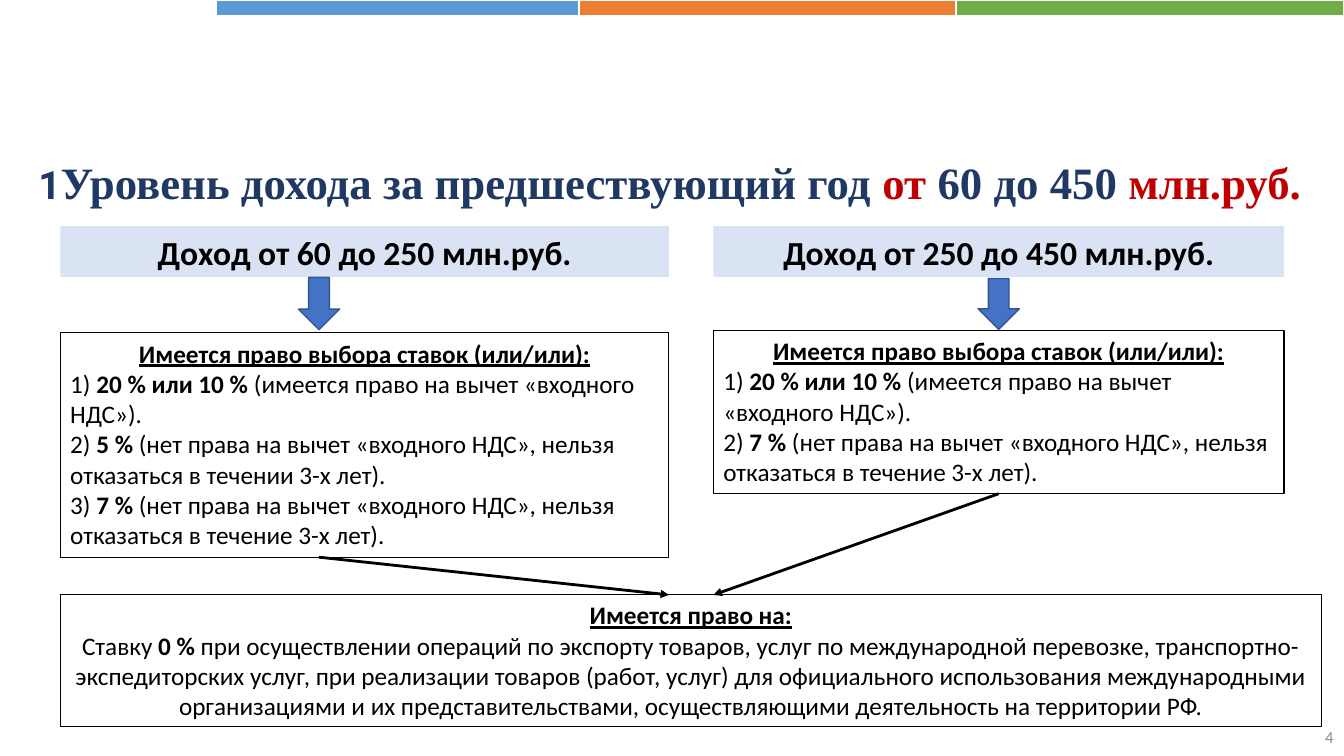
import pptx
import pptx.util
import pptx.dml.color
from lxml import etree
from pptx.enum.shapes import MSO_CONNECTOR, MSO_SHAPE
from pptx.enum.text import MSO_ANCHOR, PP_ALIGN
from pptx.oxml.ns import qn
from pptx.util import Cm

NAVY, RED, BLACK = "203864", "C00000", "000000"


def rgb(hex_code):
    return pptx.dml.color.RGBColor.from_string(hex_code)


class RatesSlide:
    body_font = "Calibri"

    def __init__(self, deck):
        self.slide = deck.slides.add_slide(deck.slide_layouts[5])
        self.shapes = self.slide.shapes

    def style(self, font, size, color, bold=None):
        font.name = self.body_font
        font.size = pptx.util.Pt(size)
        font.color.rgb = rgb(color)
        font.bold = bold

    def title(self, area, parts):
        """Fill the title from (text, font, size, colour) parts."""
        title = self.shapes.title
        title.left, title.top, title.width, title.height = map(Cm, area)
        title.text_frame.vertical_anchor = MSO_ANCHOR.TOP
        title.text_frame.word_wrap = True
        paragraph = title.text_frame.paragraphs[0]
        paragraph.alignment = PP_ALIGN.LEFT
        paragraph.line_spacing = 1.0
        paragraph.font.bold = True
        for text, font_name, size, color in parts:
            run = paragraph.add_run()
            run.text = text
            run.font.name = font_name
            run.font.size = pptx.util.Pt(size)
            run.font.color.rgb = rgb(color)

    def shape(self, kind, area, fill=None, line=None, line_width=1):
        shape = self.shapes.add_shape(kind, *map(Cm, area))
        shape.shadow.inherit = False
        if fill:
            shape.fill.solid()
            shape.fill.fore_color.rgb = rgb(fill)
        else:
            shape.fill.background()
        if line:
            shape.line.color.rgb = rgb(line)
            shape.line.width = pptx.util.Pt(line_width)
        else:
            shape.line.fill.background()
        return shape

    def income_band(self, area, text):
        band = self.shape(MSO_SHAPE.RECTANGLE, area, "DAE3F3")
        paragraph = band.text_frame.paragraphs[0]
        paragraph.text = text
        paragraph.alignment = PP_ALIGN.CENTER
        self.style(paragraph.font, 24, BLACK, True)

    def rules_box(self, area, heading, rules, alignment=PP_ALIGN.LEFT):
        """Draw a framed box; each rule is (lead, bold rate, explanation)."""
        box = self.shape(MSO_SHAPE.RECTANGLE, area, line=BLACK, line_width=0.75)
        frame = box.text_frame
        frame.vertical_anchor = MSO_ANCHOR.TOP
        top = frame.paragraphs[0]
        top.text = heading
        top.alignment = PP_ALIGN.CENTER
        self.style(top.font, 18, BLACK, True)
        top.font.underline = True
        for rule in rules:
            paragraph = frame.add_paragraph()
            paragraph.alignment = alignment
            self.style(paragraph.font, 18, BLACK)
            for text, bold in zip(rule, (False, True, False)):
                run = paragraph.add_run()
                run.text = text
                run.font.bold = bold
        return box

    def arrow(self, start, end, source=None):
        arrow = self.shapes.add_connector(MSO_CONNECTOR.STRAIGHT, *map(Cm, start + end))
        if source is not None:
            arrow.begin_connect(source, 2)
        arrow.line.color.rgb = rgb(BLACK)
        arrow.line.width = pptx.util.Pt(2)
        etree.SubElement(arrow.line._get_or_add_ln(), qn("a:tailEnd"), type="triangle")
        etree.SubElement(arrow._element.spPr, qn("a:effectLst"))

    def page_number(self, area, number):
        box = self.shapes.add_textbox(*map(Cm, area))
        box.text_frame.word_wrap = True
        box.text_frame.vertical_anchor = MSO_ANCHOR.MIDDLE
        paragraph = box.text_frame.paragraphs[0]
        paragraph.text = number
        paragraph.alignment = PP_ALIGN.RIGHT
        self.style(paragraph.font, 12, "8C8C8C")


def main():
    deck = pptx.Presentation()
    deck.slide_width, deck.slide_height = Cm(33.87), Cm(19.05)
    page = RatesSlide(deck)

    for left, width, color in ((5.46, 9.12, "5B9BD5"), (14.6, 9.5, "ED7D31"),
                               (24.09, 9.78, "70AD47")):
        page.shape(MSO_SHAPE.RECTANGLE, (left, 0, width, 0.4), color, "FFFFFF")

    serif = "Times New Roman"
    page.title((0.71, 3.78, 32.8, 1.62), (
        ("1", "Roboto", 28, NAVY),
        ("Уровень дохода за предшествующий год", serif, 32, NAVY),
        (" от ", serif, 32, RED),
        ("60 до 450 ", serif, 32, NAVY),
        ("млн.руб.", serif, 32, RED),
    ))
    page.page_number((26.24, 18.06, 7.62, 1.02), "4")

    left_x, left_width = 1.52, 15.34
    right_x, right_width = 17.98, 14.38
    left_axis, right_axis = 8.04, right_x + right_width / 2
    summary_top = 14.99
    page.income_band((left_x, 5.7, left_width, 1.28), "Доход от 60 до 250 млн.руб.")
    page.income_band((right_x, 5.7, right_width, 1.28), "Доход от 250 до 450 млн.руб.")
    for axis, top, height in ((left_axis, 6.99, 1.32), (right_axis, 7.02, 1.28)):
        page.shape(MSO_SHAPE.DOWN_ARROW, (axis - 0.52, top, 1.04, height),
                   "4472C4", "325491")

    choice = "Имеется право выбора ставок (или/или):"
    deduction = "(имеется право на вычет «входного НДС»)."
    no_deduction = "(нет права на вычет «входного НДС», нельзя отказаться в {} 3-х лет)."
    page.rules_box((left_x, 8.39, left_width, 5.65), choice, (
        ("1) ", "20 % или 10 % ", deduction),
        ("2) ", "5 % ", no_deduction.format("течении")),
        ("3) ", "7 % ", no_deduction.format("течение")),
    ))
    right_box = page.rules_box((right_x, 8.33, right_width, 4.11), choice, (
        ("1) ", "20 % или 10 % ", deduction),
        ("2) ", "7 % ", no_deduction.format("течение")),
    ))
    page.rules_box((left_x, summary_top, 31.78, 3.33), "Имеется право на:", ((
        "Ставку ", "0 % ",
        "при осуществлении операций по экспорту товаров, услуг по международной "
        "перевозке, транспортно-экспедиторских услуг, при реализации товаров "
        "(работ, услуг) для официального использования международными "
        "организациями и их представительствами, осуществляющими деятельность "
        "на территории РФ."),), PP_ALIGN.CENTER)

    page.arrow((left_axis, 14.04), (left_x + left_width, summary_top))
    page.arrow((right_axis, 12.44), (right_x, summary_top), right_box)
    deck.save("out.pptx")


if __name__ == "__main__":
    main()
